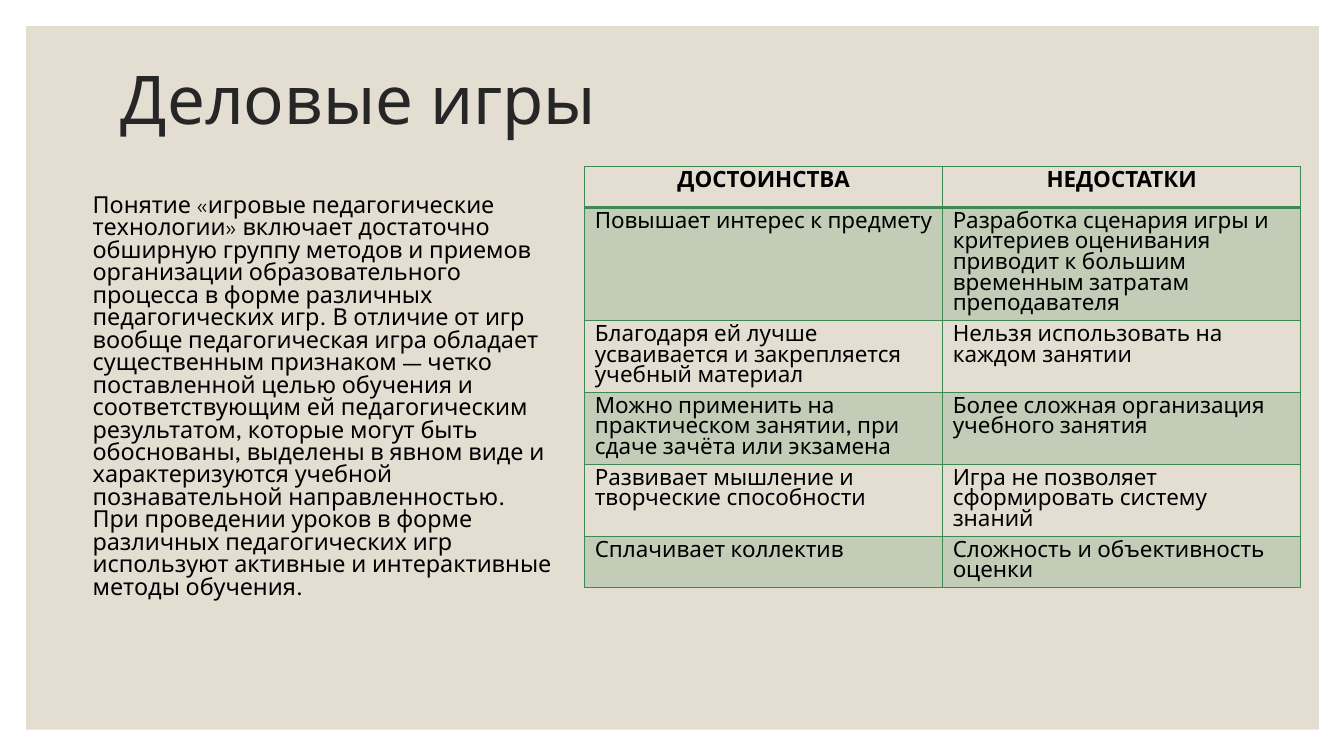
"""Builds a slide on business games: a description and a table of pros and cons."""
from lxml import etree
from pptx import Presentation
from pptx.dml.color import RGBColor
from pptx.enum.shapes import MSO_SHAPE
from pptx.enum.text import MSO_ANCHOR, PP_ALIGN
from pptx.oxml.ns import qn
from pptx.util import Inches, Pt

RECTANGLE = MSO_SHAPE.RECTANGLE
TOP, MIDDLE = MSO_ANCHOR.TOP, MSO_ANCHOR.MIDDLE
LEFT, CENTER = PP_ALIGN.LEFT, PP_ALIGN.CENTER
FONT = "League Spartan"
BEIGE = RGBColor(0xE3, 0xDE, 0xD1)
GREEN = RGBColor(0x3E, 0x88, 0x53)
DARK = RGBColor(0x26, 0x26, 0x26)
BLACK = RGBColor(0, 0, 0)

TITLE = "Деловые игры"
DESCRIPTION = (
    "Понятие «игровые педагогические технологии» включает достаточно обширную "
    "группу методов и приемов организации образовательного процесса в форме "
    "различных педагогических игр. В отличие от игр вообще педагогическая игра "
    "обладает существенным признаком — четко поставленной целью обучения и "
    "соответствующим ей педагогическим результатом, которые могут быть "
    "обоснованы, выделены в явном виде и характеризуются учебной познавательной "
    "направленностью. При проведении уроков в форме различных педагогических игр "
    "используют активные и интерактивные методы обучения."
)
ROWS = [
    ("ДОСТОИНСТВА", "НЕДОСТАТКИ"),
    ("Повышает интерес к предмету",
     "Разработка сценария игры и критериев оценивания приводит к большим "
     "временным затратам преподавателя"),
    ("Благодаря ей лучше усваивается и закрепляется учебный материал",
     "Нельзя использовать на каждом занятии"),
    ("Можно применить на практическом занятии, при сдаче зачёта или экзамена",
     "Более сложная организация учебного занятия"),
    ("Развивает мышление и творческие способности",
     "Игра не позволяет сформировать систему знаний"),
    ("Сплачивает коллектив", "Сложность и объективность оценки"),
]


def write(frame, text, size, color, spacing, bold=False, align=LEFT):
    para = frame.paragraphs[0]
    para.alignment = align
    para.line_spacing = spacing
    span = para.add_run()
    span.text = text
    span.font.name = FONT
    span.font.size = Pt(size)
    span.font.bold = bold
    span.font.color.rgb = color
    return para


def add_border(cell, side, width):
    line = etree.Element(qn(f"a:{side}"), w=str(Pt(width)))
    fill = etree.SubElement(line, qn("a:solidFill"))
    etree.SubElement(fill, qn("a:srgbClr"), val=str(GREEN))
    return line


deck = Presentation()
deck.slide_width = Inches(13.33)
deck.slide_height = Inches(7.5)
page = deck.slides.add_slide(deck.slide_layouts[6])

panel = page.shapes.add_shape(
    RECTANGLE, Inches(0.26), Inches(0.26), Inches(12.82), Inches(6.98))
panel.shadow.inherit = False
panel.fill.solid()
panel.fill.fore_color.rgb = BEIGE
panel.line.fill.background()

for left, top, width, height, anchor, text, size, color, spacing, before in [
    (1.1, 0.27, 11, 1.5, MIDDLE, TITLE, 48, DARK, 0.9, 0),
    (0.82, 1.89, 4.81, 4.66, TOP, DESCRIPTION, 16.7, BLACK, 0.8, 9),
]:
    box = page.shapes.add_textbox(
        Inches(left), Inches(top), Inches(width), Inches(height))
    box.text_frame.word_wrap = True
    box.text_frame.vertical_anchor = anchor
    para = write(box.text_frame, text, size, color, spacing)
    para.space_before = Pt(before)

table = page.shapes.add_table(
    len(ROWS), 2, Inches(5.8), Inches(1.65), Inches(7.1), Inches(2.46)).table
for row_index, row in enumerate(ROWS):
    header = row_index == 0
    table.rows[row_index].height = Inches(0.41)
    for column_index, text in enumerate(row):
        cell = table.cell(row_index, column_index)
        write(cell.text_frame, text, 16, BLACK, Pt(14.7), header,
              CENTER if header else LEFT)
        if row_index % 2:
            cell.fill.solid()
            cell.fill.fore_color.rgb = GREEN
            tint = cell._tc.tcPr.find(f".//{qn('a:srgbClr')}")
            etree.SubElement(tint, qn("a:alpha"), val="20000")
        else:
            cell.fill.background()
        widths = {"lnL": 1, "lnR": 1, "lnT": 1, "lnB": 2 if header else 1}
        for position, (side, width) in enumerate(widths.items()):
            cell._tc.tcPr.insert(position, add_border(cell, side, width))

deck.save("out.pptx")
